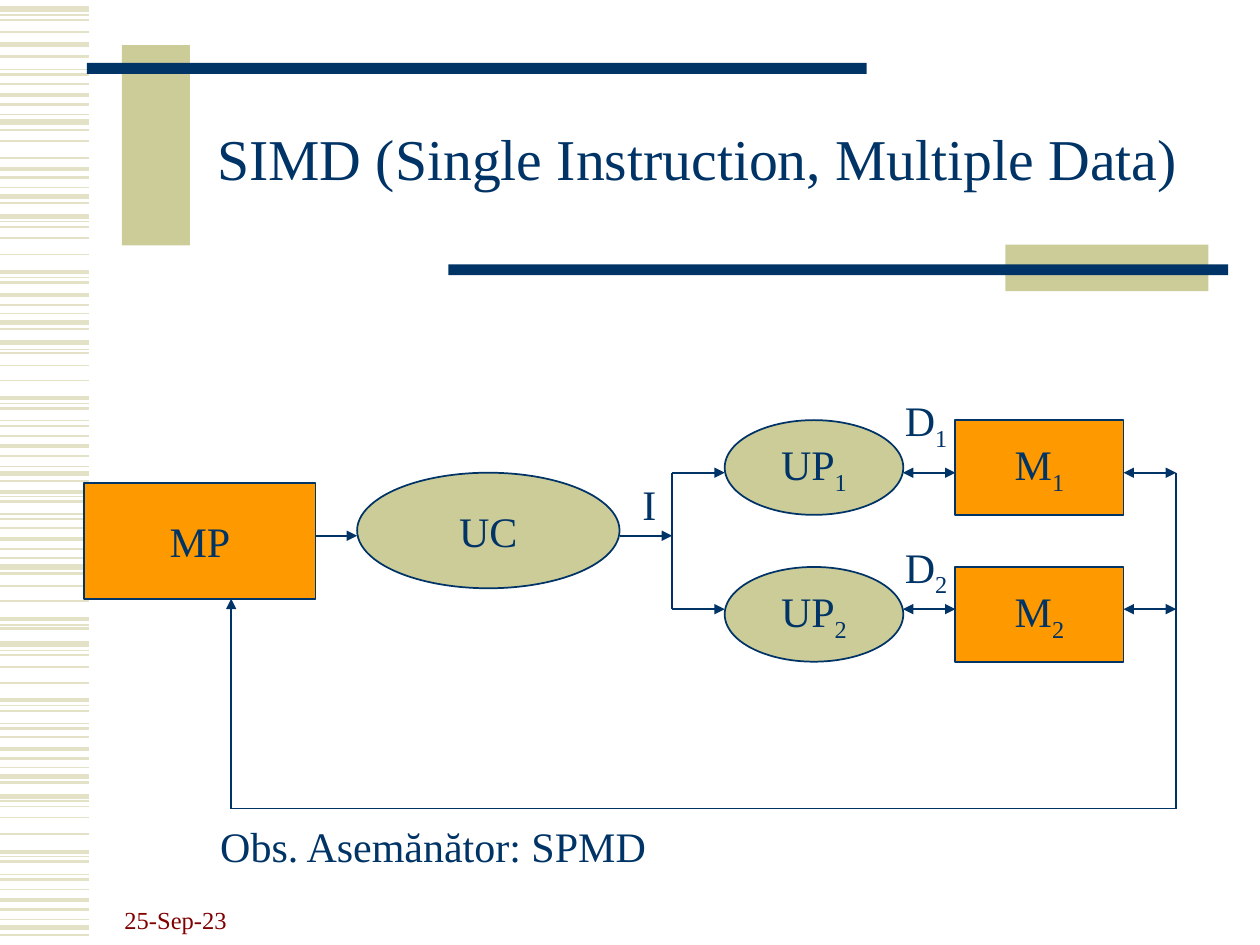
from dataclasses import dataclass

from lxml.etree import SubElement
from pptx import Presentation
from pptx.dml.color import RGBColor
from pptx.enum.shapes import MSO_CONNECTOR, MSO_SHAPE
from pptx.enum.text import MSO_ANCHOR, MSO_AUTO_SIZE, PP_ALIGN
from pptx.oxml.ns import qn
from pptx.util import Cm, Pt

COLORS = {
    "navy": "003366",
    "khaki": "CCCC99",
    "stripe": "E3E2C7",
    "orange": "FF9900",
    "maroon": "800000",
}
FONT = "Times New Roman"

# Line weight in points -> heights of the margin stripes in cm
STRIPES = {
    3: (0.18, 0.89, 2.46, 3.96, 4.37, 6.5, 6.91, 9.55, 11.43, 12.98, 15.65,
        16.05, 18.69),
    2.25: (1.91, 3.4, 5.49, 5.94, 8.03, 8.99, 9.91, 10.87, 12.47, 14.12,
           15.09, 17.17, 18.14),
    1.5: (1.14, 1.5, 2.11, 2.62, 3.58, 4.09, 5.69, 6.15, 6.63, 8.23, 8.59,
          9.19, 9.7, 10.11, 10.46, 11.07, 11.56, 12.67, 14.33, 14.68, 15.29,
          15.77, 17.37, 17.73, 18.34, 18.85),
    1: (0.41, 0.64, 1.7, 2.84, 3.18, 4.57, 4.8, 5.13, 7.11, 7.37, 7.67, 8.79,
        10.64, 11.81, 12.12, 13.21, 13.44, 13.77, 14.86, 16.26, 16.48, 16.81,
        17.93),
    0.75: (0.3, 1.4, 2.31, 3.78, 4.47, 5.59, 6.32, 7.04, 8.13, 8.48, 9.4,
           10.01, 10.36, 11.25, 12.6, 13.11, 14.22, 14.58, 15.47, 16.15,
           17.27, 17.63, 18.54),
}


@dataclass
class Box:
    x: float
    y: float
    w: float
    h: float
    color: str
    text: str = ""
    sub: str = ""
    kind: MSO_SHAPE = MSO_SHAPE.RECTANGLE
    outlined: bool = True


@dataclass
class Line:
    x1: float
    y1: float
    x2: float
    y2: float
    head: bool = False
    tail: bool = False
    color: str = "navy"
    weight: float = 1


@dataclass
class Label:
    x: float
    y: float
    w: float
    h: float
    text: str
    sub: str = ""
    size: int = 24
    color: str = "navy"
    anchor: MSO_ANCHOR = MSO_ANCHOR.TOP
    wrap: bool = True


def rgb(name: str) -> RGBColor:
    return RGBColor.from_string(COLORS[name])


def write(tf, text: str, sub: str = "", size: int = 24,
          color: str = "navy") -> None:
    """Fill the first paragraph with text and an optional subscript."""
    p = tf.paragraphs[0]
    p.font.name, p.font.size = FONT, Pt(size)
    p.font.color.rgb = rgb(color)
    p.add_run().text = text
    if sub:
        r = p.add_run()
        r.text = sub
        r._r.get_or_add_rPr().set("baseline", "-25000")


def draw_box(s, box: Box) -> None:
    sp = s.shapes.add_shape(box.kind, Cm(box.x), Cm(box.y), Cm(box.w), Cm(box.h))
    sp.shadow.inherit = False
    sp.fill.solid()
    sp.fill.fore_color.rgb = rgb(box.color)
    if box.outlined:
        sp.line.color.rgb = rgb("navy")
        sp.line.width = Pt(1)
    else:
        sp.line.fill.background()
    if box.text:
        tf = sp.text_frame
        tf.word_wrap = False
        tf.vertical_anchor = MSO_ANCHOR.MIDDLE
        tf.paragraphs[0].alignment = PP_ALIGN.CENTER
        write(tf, box.text, box.sub)


def draw_line(s, line: Line) -> None:
    cx = s.shapes.add_connector(MSO_CONNECTOR.STRAIGHT, Cm(line.x1), Cm(line.y1),
                                Cm(line.x2), Cm(line.y2))
    cx.line.color.rgb = rgb(line.color)
    cx.line.width = Pt(line.weight)
    ln = cx.line._get_or_add_ln()
    for tag, shown in (("a:headEnd", line.head), ("a:tailEnd", line.tail)):
        if shown:
            SubElement(ln, qn(tag), type="triangle")
    SubElement(cx._element.spPr, qn("a:effectLst"))


def draw_label(s, label: Label) -> None:
    sp = s.shapes.add_textbox(Cm(label.x), Cm(label.y), Cm(label.w), Cm(label.h))
    tf = sp.text_frame
    tf.word_wrap = label.wrap
    tf.vertical_anchor = label.anchor
    write(tf, label.text, label.sub, label.size, label.color)


def draw_title(s, text: str) -> None:
    sp = s.shapes.title
    sp.left, sp.top, sp.width, sp.height = Cm(3.81), Cm(1.7), Cm(20.5), Cm(3.18)
    tf = sp.text_frame
    tf.auto_size = MSO_AUTO_SIZE.NONE
    tf.vertical_anchor = MSO_ANCHOR.MIDDLE
    p = tf.paragraphs[0]
    p.alignment = PP_ALIGN.CENTER
    p.line_spacing = 0.85
    write(tf, text, size=33)


def draw_background(s) -> None:
    for weight, heights in STRIPES.items():
        for y in heights:
            draw_line(s, Line(0, y, 1.8, y, color="stripe", weight=weight))
    for box in (
        Box(2.46, 0.91, 1.37, 4.04, "khaki", outlined=False),
        Box(1.75, 1.27, 15.72, 0.22, "navy", outlined=False),
        Box(20.27, 4.93, 4.09, 0.94, "khaki", outlined=False),
        Box(9.04, 5.33, 15.72, 0.22, "navy", outlined=False),
    ):
        draw_box(s, box)


def draw_diagram(s) -> None:
    split_x, bus_x, return_x = 13.55, 23.71, 4.66
    lane_ys, main_y, return_y = (9.53, 12.28), 10.8, 16.3
    lines = [
        Line(6.15, main_y, 7.2, main_y, tail=True),
        Line(12.49, main_y, split_x, main_y, tail=True),
        Line(split_x, lane_ys[0], split_x, lane_ys[1]),
        Line(bus_x, lane_ys[0], bus_x, return_y),
        Line(bus_x, return_y, return_x, return_y),
        Line(return_x, return_y, return_x, 12.07, tail=True),
    ]
    boxes = [
        Box(1.7, 9.74, 4.66, 2.33, "orange", "MP"),
        Box(7.2, 9.53, 5.29, 2.33, "khaki", "UC", kind=MSO_SHAPE.OVAL),
    ]
    labels = [
        Label(12.7, 9.53, 1.06, 1.27, "I"),
        Label(4.19, 16.41, 9.14, 1.27, "Obs. Asemănător: SPMD", wrap=False),
    ]
    for i, y in enumerate(lane_ys):
        top, sub = 8.47 + i * 2.96, str(i + 1)
        lines += [
            Line(split_x, y, 14.61, y, tail=True),
            Line(18.2, y, 19.26, y, head=True, tail=True),
            Line(22.65, y, bus_x, y, head=True, tail=True),
        ]
        boxes += [
            Box(14.61, top, 3.6, 1.91, "khaki", "UP", sub, MSO_SHAPE.OVAL),
            Box(19.26, top, 3.39, 1.91, "orange", "M", sub),
        ]
        labels.append(Label(17.99, top - 0.64, 1.48, 1.27, "D", sub))

    for draw, items in ((draw_line, lines), (draw_box, boxes), (draw_label, labels)):
        for item in items:
            draw(s, item)


def main() -> None:
    prs = Presentation()
    prs.slide_width, prs.slide_height = Cm(25.4), Cm(19.05)
    s = prs.slides.add_slide(prs.slide_layouts[5])
    draw_background(s)
    draw_title(s, "SIMD (Single Instruction, Multiple Data)")
    draw_diagram(s)
    draw_label(s, Label(2.26, 17.7, 5.28, 1.27, "25-Sep-23", size=14,
                        color="maroon", anchor=MSO_ANCHOR.BOTTOM))
    prs.save("out.pptx")


if __name__ == "__main__":
    main()
